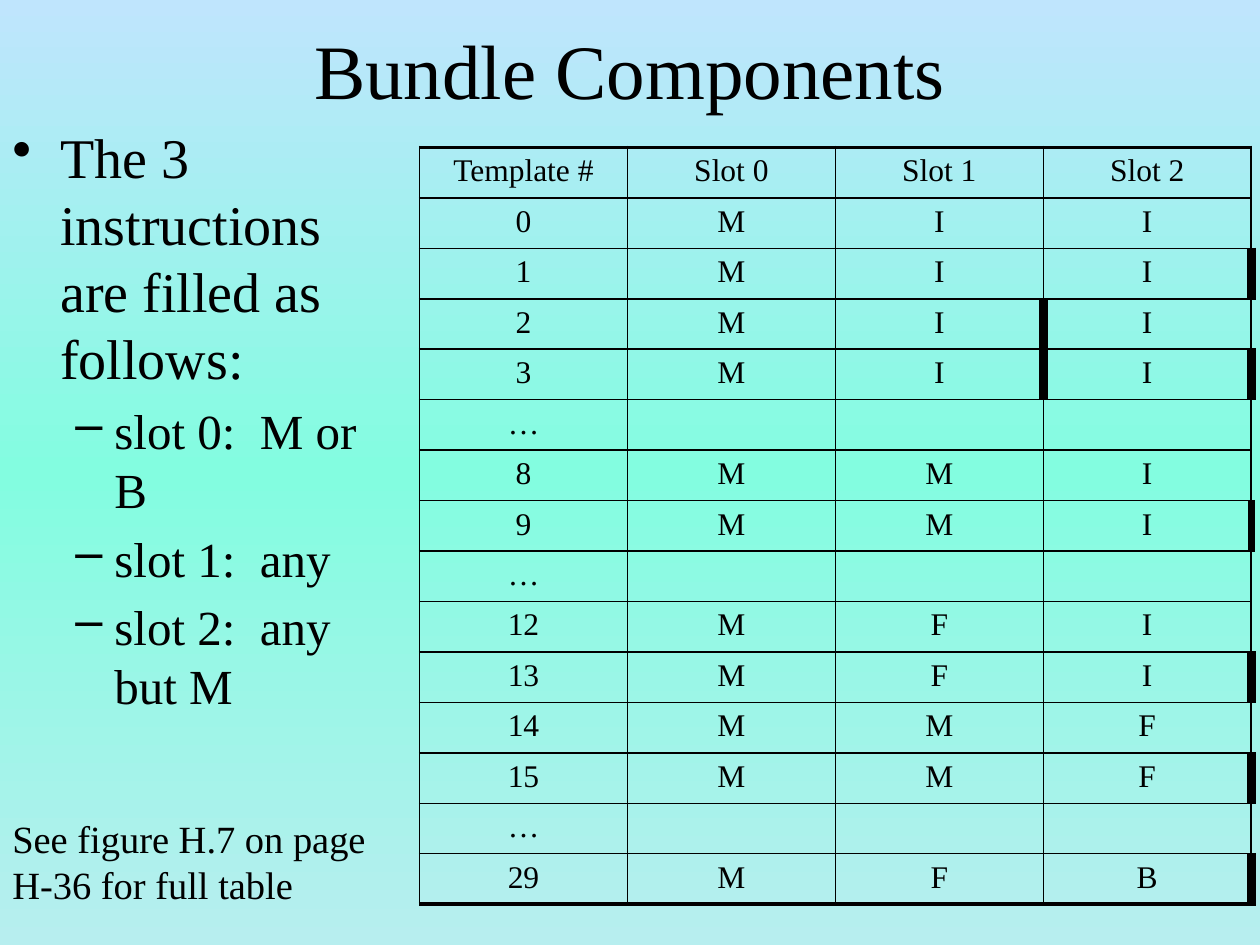
import copy
import pptx
import pptx.util
import pptx.dml.color
import pptx.enum.text
import pptx.oxml
import pptx.oxml.ns
from lxml import etree

Inches, Pt = pptx.util.Inches, pptx.util.Pt
RGB = pptx.dml.color.RGBColor.from_string
ALIGN = pptx.enum.text.PP_ALIGN
ANCHOR = pptx.enum.text.MSO_ANCHOR
qn = pptx.oxml.ns.qn

# Content
TITLE = "Bundle Components"
POINTS = [
    (0, "The 3 instructions are filled as follows:"),
    (1, "slot 0:  M or B"),
    (1, "slot 1:  any"),
    (1, "slot 2:  any but M"),
]
NOTE = ["See figure H.7 on page", "H-36 for full table"]
HEAD = ["Template #", "Slot 0", "Slot 1", "Slot 2"]
# Template number, slot letters, and stops as {slot: line width}
ROWS = [
    ("0", "MII", {}),
    ("1", "MII", {2: 6}),
    ("2", "MII", {1: 6}),
    ("3", "MII", {1: 6, 2: 6}),
    ("…", "", {}),
    ("8", "MMI", {}),
    ("9", "MMI", {2: 4.5}),
    ("…", "", {}),
    ("12", "MFI", {}),
    ("13", "MFI", {2: 6}),
    ("14", "MMF", {}),
    ("15", "MMF", {2: 6}),
    ("…", "", {}),
    ("29", "MFB", {2: 6}),
]

THEME = {
    "font": "Times New Roman",
    "ink": "000000",
    "sky": [(0, "BFE5FD"), (0.5, "83FDE0"), (1, "B7EEEF")],
    "title": 44, "body": [32, 28], "cell": 18, "note": 22,
    "thin": 1, "edge": 2.25,
}
# Bullet mark, left margin and first-line indent for each level
LEVELS = [("•", 0.38, -0.38), ("–", 0.81, -0.31)]


def put(item, vals):
    for name, val in vals.items():
        setattr(item, name, val)


def write(para, text, size, **form):
    put(para, form)
    run = para.add_run()
    run.text = text
    put(run.font, {"name": THEME["font"], "size": Pt(size)})
    run.font.color.rgb = RGB(THEME["ink"])


def box(slide, left, top, width, height, **form):
    area = slide.shapes.add_textbox(*map(Inches, (left, top, width, height)))
    put(area.text_frame, {"word_wrap": True, **form})
    return area.text_frame


def paras(frame, count):
    return [frame.paragraphs[0]] + [frame.add_paragraph() for _ in range(count - 1)]


def bullet(para, mark, left, indent):
    props = para._p.get_or_add_pPr()
    props.set("marL", str(Inches(left)))
    props.set("indent", str(Inches(indent)))
    etree.SubElement(props, qn("a:buChar")).set("char", mark)


def border(cell, widths):
    props = cell._tc.get_or_add_tcPr()
    for spot, (side, width) in enumerate(widths.items()):
        line = etree.Element(qn("a:ln" + side), w=str(Pt(width)))
        fill = etree.SubElement(line, qn("a:solidFill"))
        etree.SubElement(fill, qn("a:srgbClr")).set("val", THEME["ink"])
        props.insert(spot, line)


def sky(slide):
    fill = slide.background.fill
    fill.gradient()
    fill.gradient_angle = 270
    first = fill.gradient_stops[0]._gs
    first.addnext(copy.deepcopy(first))
    for stop, (place, tint) in zip(fill.gradient_stops, THEME["sky"]):
        stop.position = place
        stop.color.rgb = RGB(tint)


def grid(slide):
    cells = [HEAD] + [[num, *slots.ljust(3)] for num, slots, _ in ROWS]
    stops = [{}] + [marks for _, _, marks in ROWS]
    count, wide, tall = len(cells), 1.65, 0.39
    frame = slide.shapes.add_table(count, len(HEAD), Inches(3.33), Inches(1.17),
                                   Inches(wide * len(HEAD)), Inches(tall * count))
    table = frame.table
    put(table, {"first_row": False, "horz_banding": False})
    for col in table.columns:
        col.width = Inches(wide)
    thin, edge = THEME["thin"], THEME["edge"]
    for r, texts in enumerate(cells):
        table.rows[r].height = Inches(tall)
        for c, text in enumerate(texts):
            cell = table.cell(r, c)
            cell.fill.background()
            # Column c holds slot c - 1; a stop closes its right side
            border(cell, {
                "L": stops[r].get(c - 2, thin),
                "R": stops[r].get(c - 1, thin),
                "T": edge if r == 0 else thin,
                "B": edge if r == count - 1 else thin,
            })
            if text.strip():
                size = THEME["cell"]
                write(cell.text_frame.paragraphs[0], text, size,
                      alignment=ALIGN.CENTER, space_before=Pt(0.2 * size))


def main():
    deck = pptx.Presentation()
    put(deck, {"slide_width": Inches(10), "slide_height": Inches(7.5)})
    slide = deck.slides.add_slide(deck.slide_layouts[6])
    sky(slide)

    # Title
    frame = box(slide, 0.5, -0.08, 9, 1.25, vertical_anchor=ANCHOR.MIDDLE)
    write(frame.paragraphs[0], TITLE, THEME["title"], alignment=ALIGN.CENTER)

    # Bulleted points
    frame = box(slide, 0, 0.92, 3.08, 6.33)
    for para, (level, text) in zip(paras(frame, len(POINTS)), POINTS):
        size = THEME["body"][level]
        write(para, text, size, level=level, space_before=Pt(0.2 * size))
        bullet(para, *LEVELS[level])

    # Template table
    grid(slide)

    # Note
    frame = box(slide, 0, 6.42, 3.04, 0.84, word_wrap=False)
    for para, text in zip(paras(frame, len(NOTE)), NOTE):
        write(para, text, THEME["note"])

    deck.save("out.pptx")


if __name__ == "__main__":
    main()
